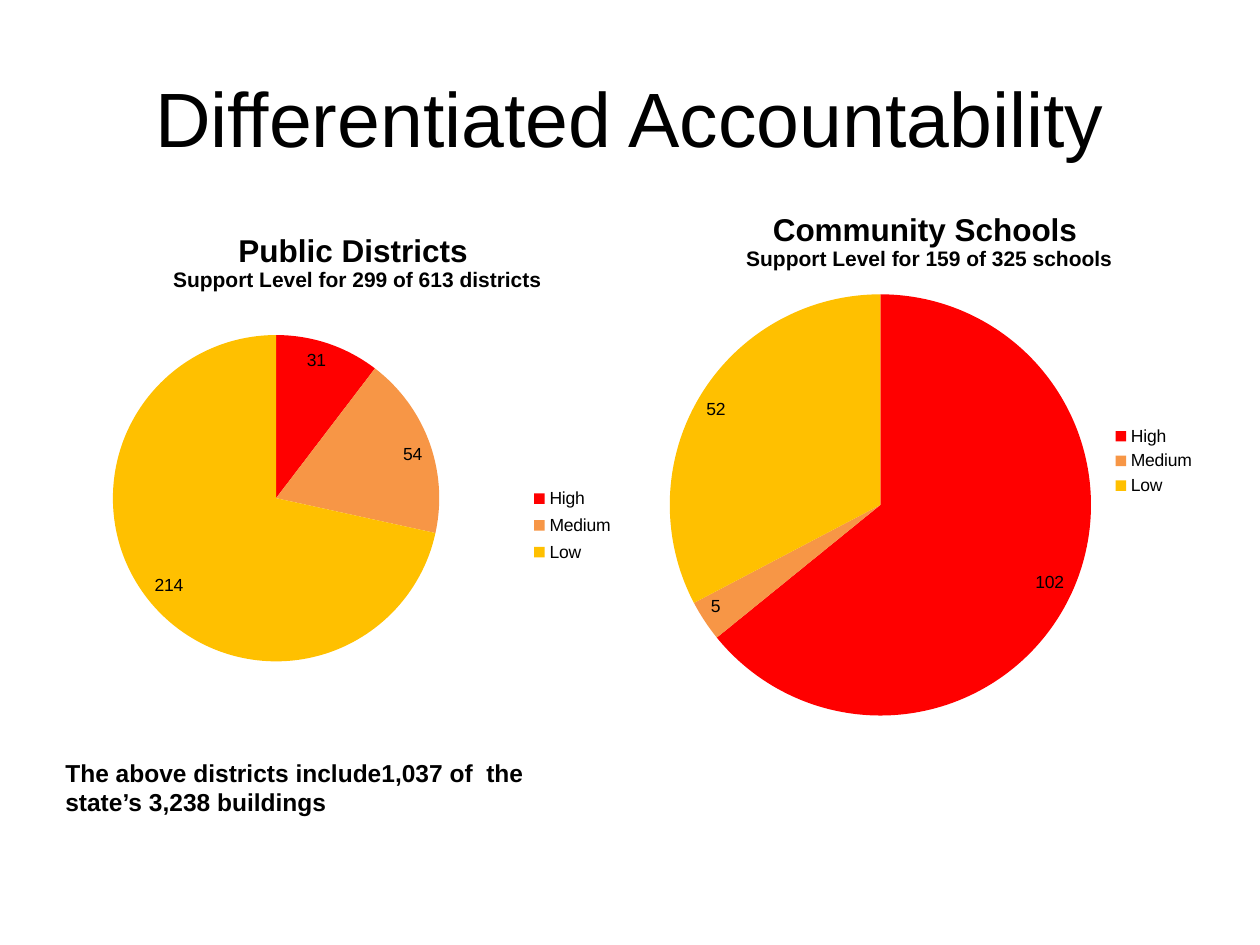
from lxml.etree import SubElement
from pptx import Presentation
from pptx.chart.data import CategoryChartData
from pptx.dml.color import RGBColor
from pptx.enum.chart import XL_CHART_TYPE, XL_LABEL_POSITION, XL_LEGEND_POSITION
from pptx.enum.text import MSO_ANCHOR, PP_ALIGN
from pptx.oxml.ns import qn
from pptx.util import Emu, Pt

PX_PER_INCH = 126
FONT = "Arial"
COLORS = {
    "text": "000000",
    "Public Schools": "BBE0E3",
    "High ": "FF0000",
    "Medium": "F79646",
    "Low": "FFC000",
}


def px(value):
    return Emu(round(value * 914400 / PX_PER_INCH))


def color(name):
    return RGBColor.from_string(COLORS[name])


def style_font(font, size, bold=False):
    font.name = FONT
    font.size = Pt(size)
    font.bold = bold
    font.color.rgb = color("text")


def add_title(slide, text, box):
    title = slide.shapes.title
    title.left, title.top, title.width, title.height = map(px, box)
    frame = title.text_frame
    frame.text = text
    frame.vertical_anchor = MSO_ANCHOR.MIDDLE
    frame.paragraphs[0].alignment = PP_ALIGN.CENTER
    style_font(frame.paragraphs[0].runs[0].font, 44)


def add_note(slide, text, box):
    frame = slide.shapes.add_textbox(*map(px, box)).text_frame
    frame.word_wrap = True
    frame.vertical_anchor = MSO_ANCHOR.BOTTOM
    frame.text = text
    style_font(frame.paragraphs[0].runs[0].font, 14, bold=True)


def set_layout(parent, index, fractions, inner=False):
    """Place a chart part by fractions (x, y, w, h) of the chart's size."""
    for old in parent.findall(qn("c:layout")):
        parent.remove(old)
    layout = SubElement(parent, qn("c:layout"))
    parent.insert(index, layout)
    manual = SubElement(layout, qn("c:manualLayout"))
    settings = [("layoutTarget", "inner")] if inner else []
    settings += [("xMode", "edge"), ("yMode", "edge")]
    settings += zip("xywh", fractions)
    for tag, value in settings:
        SubElement(manual, qn(f"c:{tag}")).set("val", str(value))


def hide_legend_entry(legend, index):
    entry = SubElement(legend, qn("c:legendEntry"))
    legend.insert(1, entry)
    SubElement(entry, qn("c:idx")).set("val", str(index))
    SubElement(entry, qn("c:delete")).set("val", "1")


def add_pie(slide, heading, subheading, points, box):
    data = CategoryChartData()
    data.categories = list(points)
    data.add_series("Series 1", list(points.values()))
    chart = slide.shapes.add_chart(XL_CHART_TYPE.PIE, *map(px, box), data).chart
    style_font(chart.font, 10)

    # Two-line heading
    chart.has_title = True
    frame = chart.chart_title.text_frame
    frame.text = f"{heading}\n{subheading}"
    for paragraph, size in zip(frame.paragraphs, (18, 12)):
        style_font(paragraph.runs[0].font, size, bold=True)

    # Legend
    chart.has_legend = True
    chart.legend.position = XL_LEGEND_POSITION.RIGHT
    chart.legend.include_in_layout = False
    style_font(chart.legend.font, 10)

    # Slices and value labels
    plot = chart.plots[0]
    plot.vary_by_categories = True
    for index, name in enumerate(points):
        fill = plot.series[0].points[index].format.fill
        fill.solid()
        fill.fore_color.rgb = color(name)
    plot.has_data_labels = True
    labels = plot.data_labels
    labels.show_value = True
    labels.show_percentage = False
    labels.position = XL_LABEL_POSITION.INSIDE_END
    style_font(labels.font, 10)
    return chart


def main():
    presentation = Presentation()
    presentation.slide_width = px(1260)
    presentation.slide_height = px(945)
    slide = presentation.slides.add_slide(presentation.slide_layouts[5])

    add_title(slide, "Differentiated Accountability", (63, 38, 1134, 157))
    add_note(
        slide,
        "The above districts include1,037 of  the state’s 3,238 buildings",
        (53, 766, 557, 57),
    )

    # Districts: the empty first category stays out of the legend
    districts = add_pie(
        slide,
        "Public Districts ",
        "Support Level for 299 of 613 districts",
        {"Public Schools": None, "High ": 31, "Medium": 54, "Low": 214},
        (32, 210, 651, 544),
    )
    plot_area = districts.element.find(".//" + qn("c:plotArea"))
    set_layout(plot_area, 0, (0.09, 0.23, 0.57, 0.6), inner=True)
    legend = districts.element.find(".//" + qn("c:legend"))
    hide_legend_entry(legend, 0)
    set_layout(legend, 2, (0.76, 0.5, 0.14, 0.16))

    # Community schools
    add_pie(
        slide,
        "Community Schools ",
        "Support Level for 159 of 325 schools",
        {"High ": 102, "Medium": 5, "Low": 52},
        (651, 189, 557, 544),
    )

    presentation.save("out.pptx")


if __name__ == "__main__":
    main()
